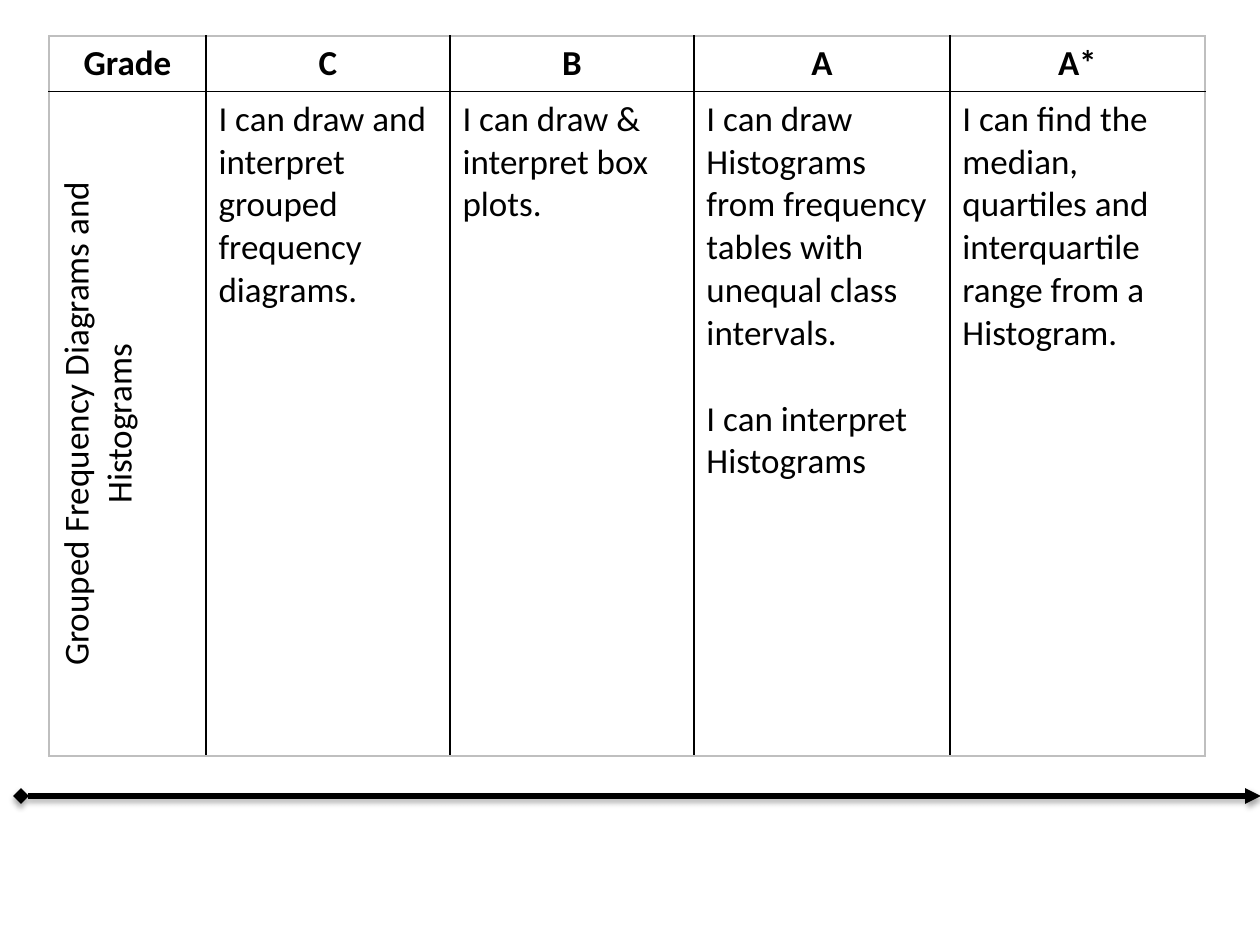
import pptx
import pptx.dml.color
import pptx.enum.shapes
import pptx.enum.text
import pptx.oxml
import pptx.oxml.ns
import pptx.util

# Content
GRADES = ["Grade", "C", "B", "A", "A*"]
TOPIC = "Grouped Frequency Diagrams and Histograms"
SKILLS = [
    ["I can draw and interpret grouped frequency diagrams."],
    ["I can draw & interpret box plots."],
    [
        "I can draw Histograms from frequency tables with unequal class intervals.",
        "I can interpret Histograms",
    ],
    ["I can find the median, quartiles and interquartile range from a Histogram."],
]
ROWS = [[[grade] for grade in GRADES], [[TOPIC]] + SKILLS]

# Layout in px, 126 px to the inch
PX = 914400 // 126
SLIDE_SIZE = (1260, 945)
TABLE_ORIGIN = (49, 36)
COLUMN_WIDTHS = [157, 244, 244, 256, 255]
ROW_HEIGHTS = [55, 664]
ARROW = (21, 796, 1261, 796)

COLORS = {"text": "000000", "paper": "FFFFFF", "inner": "000000", "outer": "BFBFBF"}
TEXT_FORMAT = {"name": "Calibri", "size": pptx.util.Pt(20)}
PARAGRAPH_GAP = pptx.util.Pt(24.4)
NAMESPACE = pptx.oxml.ns.nsdecls("a")


def px(value):
    return pptx.util.Emu(value * PX)


def rgb(name):
    return pptx.dml.color.RGBColor.from_string(COLORS[name])


def add_xml(parent, xml, index=None):
    element = pptx.oxml.parse_xml(xml)
    parent.insert(len(parent) if index is None else index, element)


def set_borders(cell, row, column):
    is_outer = {
        "lnL": column == 0,
        "lnR": column == len(COLUMN_WIDTHS) - 1,
        "lnT": row == 0,
        "lnB": row == len(ROW_HEIGHTS) - 1,
    }
    properties = cell._tc.get_or_add_tcPr()
    for index, (side, outer) in enumerate(is_outer.items()):
        color = COLORS["outer" if outer else "inner"]
        add_xml(
            properties,
            f'<a:{side} {NAMESPACE} w="12700"><a:solidFill>'
            f'<a:srgbClr val="{color}"/></a:solidFill></a:{side}>',
            index,
        )


def fill_cell(cell, paragraphs, bold, centered):
    cell.fill.solid()
    cell.fill.fore_color.rgb = rgb("paper")
    frame = cell.text_frame
    for index, text in enumerate(paragraphs):
        paragraph = frame.add_paragraph() if index else frame.paragraphs[0]
        if index:
            paragraph.space_before = PARAGRAPH_GAP
        if centered:
            paragraph.alignment = pptx.enum.text.PP_ALIGN.CENTER
        run = paragraph.add_run()
        run.text = text
        for name, value in {**TEXT_FORMAT, "bold": bold}.items():
            setattr(run.font, name, value)
        run.font.color.rgb = rgb("text")


def add_grade_table(slide):
    shape = slide.shapes.add_table(
        len(ROW_HEIGHTS), len(COLUMN_WIDTHS), *map(px, TABLE_ORIGIN),
        px(sum(COLUMN_WIDTHS)), px(sum(ROW_HEIGHTS)),
    )
    table = shape.table
    table.first_row = table.horz_banding = False
    for column, width in zip(table.columns, COLUMN_WIDTHS):
        column.width = px(width)
    for row, height in zip(table.rows, ROW_HEIGHTS):
        row.height = px(height)
    for row, cells in enumerate(ROWS):
        for column, paragraphs in enumerate(cells):
            cell = table.cell(row, column)
            fill_cell(cell, paragraphs, row == 0, row == 0 or column == 0)
            set_borders(cell, row, column)
    # The topic reads upwards
    table.cell(1, 0)._tc.get_or_add_tcPr().set("vert", "vert270")


def add_progress_arrow(slide):
    arrow = slide.shapes.add_connector(
        pptx.enum.shapes.MSO_CONNECTOR.STRAIGHT, *map(px, ARROW)
    )
    arrow.line.width = pptx.util.Pt(3)
    arrow.line.color.rgb = rgb("text")
    line = arrow.get_or_add_ln()
    for end, kind in {"headEnd": "diamond", "tailEnd": "triangle"}.items():
        add_xml(line, f'<a:{end} {NAMESPACE} type="{kind}"/>')
    # Soft shadow below the line
    add_xml(
        arrow._element.spPr,
        f'<a:effectLst {NAMESPACE}><a:outerShdw blurRad="39370" dist="22860" '
        f'dir="5400000" rotWithShape="0"><a:srgbClr val="{COLORS["text"]}">'
        '<a:alpha val="35000"/></a:srgbClr></a:outerShdw></a:effectLst>',
    )


def main():
    presentation = pptx.Presentation()
    presentation.slide_width, presentation.slide_height = map(px, SLIDE_SIZE)
    slide = presentation.slides.add_slide(presentation.slide_layouts[6])
    add_progress_arrow(slide)
    add_grade_table(slide)
    presentation.save("out.pptx")


if __name__ == "__main__":
    main()
